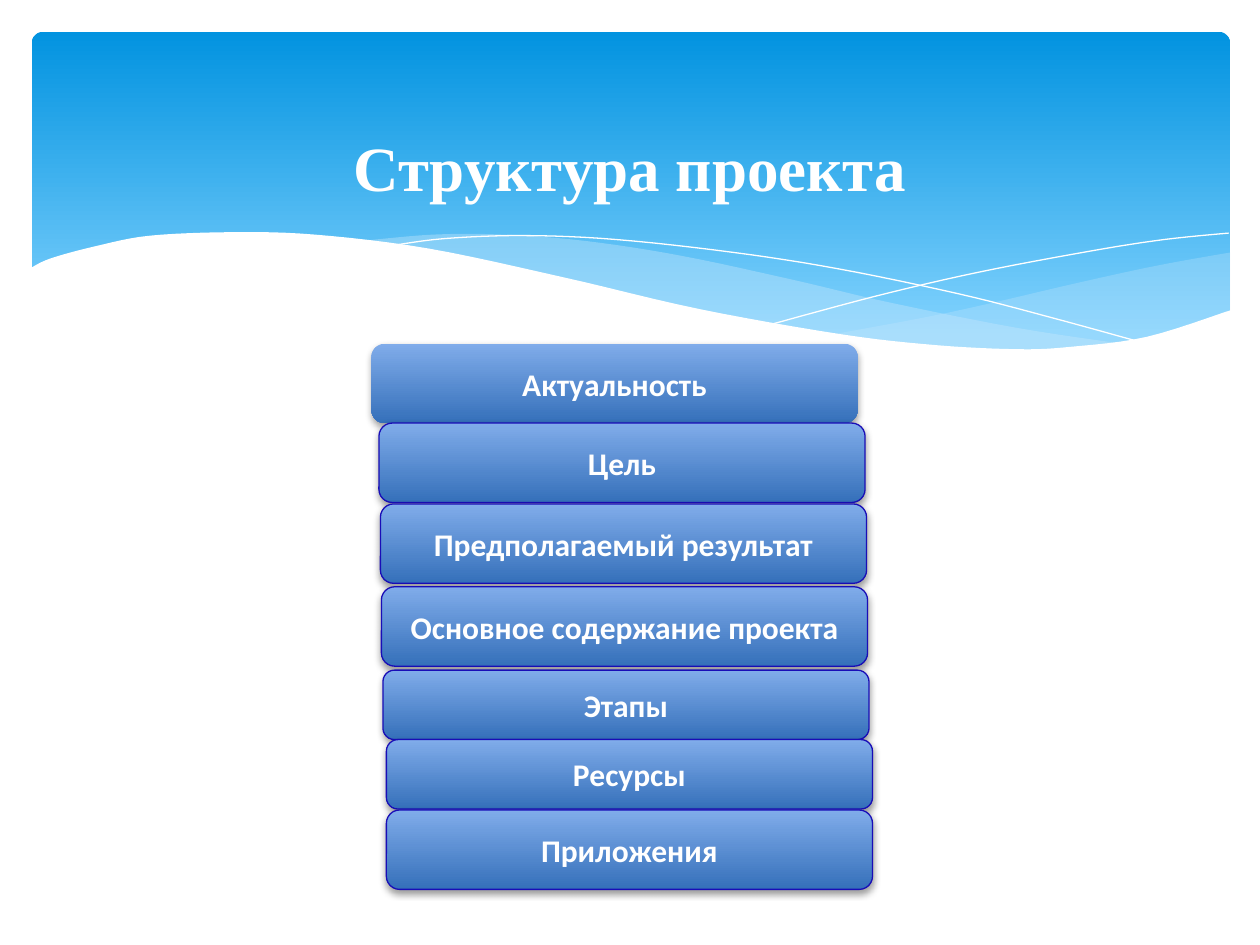
from lxml.etree import SubElement
from pptx import Presentation
from pptx.dml.color import RGBColor
from pptx.enum.shapes import MSO_SHAPE
from pptx.enum.text import MSO_ANCHOR, PP_ALIGN
from pptx.oxml.ns import qn
from pptx.util import Cm, Pt

BACK_WAVE = [
    [(24.16, 4.45), (22.76, 4.7), (21.23, 5.03), (18.49, 5.66), (16.15, 6.1)],
    [(16.15, 6.1), (17.63, 6.27), (18.9, 6.4), (20.04, 6.43), (21.06, 6.38),
     (22.35, 6.2), (23.11, 6.02), (24.16, 5.64)],
]
FRONT_WAVE = [
    [(22.05, 6.3), (19.86, 5.97), (17.3, 5.46), (15.34, 5), (13.11, 4.52),
     (11.18, 4.22), (9.5, 4.09), (8.1, 4.09), (6.63, 4.22)],
    [(6.63, 4.22), (8.05, 4.42), (9.63, 4.72), (11.84, 5.26), (14.63, 5.84),
     (17.02, 6.22), (19, 6.4), (20.4, 6.43), (22.05, 6.3)],
]
FALLING_LINE = [
    [(7.21, 4.32), (8.33, 4.17), (9.93, 4.11), (11.79, 4.19), (14.15, 4.45),
     (16.26, 4.78), (18.67, 5.28), (20.47, 5.74), (22.4, 6.27)],
]
RISING_LINE = [
    [(14.94, 5.89), (17.02, 5.33), (19.08, 4.85), (21.36, 4.42),
     (22.83, 4.19), (24.13, 4.06)],
]
WHITE_WAVE = [
    [(24.18, 5.61), (22.48, 6.15), (20.96, 6.35), (19.91, 6.4), (18.26, 6.32),
     (16.33, 6.1), (13.46, 5.59), (10.72, 4.95), (8, 4.37), (5.72, 4.09),
     (4.06, 4.04), (2.39, 4.11), (1.3, 4.32), (0.38, 4.57), (-0.05, 4.78)],
    [(-0.05, 7.72), (24.18, 7.72)],
]
SECTIONS = [
    ("Актуальность", 0, 0, 1.6, None),
    ("Цель", 0.15, 1.6, 1.6, "190DB7"),
    ("Предполагаемый результат", 0.18, 3.23, 1.6, "190DB7"),
    ("Основное содержание проекта", 0.2, 4.9, 1.6, "190DB7"),
    ("Этапы", 0.23, 6.58, 1.4, "190DB7"),
    ("Ресурсы", 0.3, 7.98, 1.4, "190DB7"),
    ("Приложения", 0.3, 9.4, 1.6, "190DB7"),
]


def color(value):
    return RGBColor.from_string(value)


def write(frame, text, size, font, ink="FFFFFF", bold=True, align=PP_ALIGN.CENTER):
    para = frame.paragraphs[0]
    para.alignment = align
    span = para.add_run()
    span.text = text
    span.font.size = Pt(size)
    span.font.name = font
    span.font.bold = bold
    span.font.color.rgb = color(ink)


def paint(shape, fill=None, alpha=None, line=None, width=0.75):
    shape.shadow.inherit = False
    if fill:
        shape.fill.solid()
        shape.fill.fore_color.rgb = color(fill)
    else:
        shape.fill.background()
    if alpha:
        tint = shape.element.spPr.find(".//" + qn("a:srgbClr"))
        SubElement(tint, qn("a:alpha"), val=str(alpha * 1000))
    if line:
        shape.line.color.rgb = color(line)
        shape.line.width = Pt(width)
    else:
        shape.line.fill.background()


def shade(shape, top, bottom, end=1):
    shape.fill.gradient()
    shape.fill.gradient_angle = 270
    for stop, value, position in zip(shape.fill.gradient_stops, (top, bottom), (0, end)):
        stop.color.rgb = color(value)
        stop.position = position


def cast_shadow(shape):
    effects = shape.element.spPr.find(qn("a:effectLst"))
    shadow = SubElement(effects, qn("a:outerShdw"), blurRad=str(Pt(4)),
                        dist=str(Pt(2)), dir="5400000", rotWithShape="0")
    tint = SubElement(shadow, qn("a:srgbClr"), val="000000")
    SubElement(tint, qn("a:alpha"), val="38000")


def smooth(knots, steps=6):
    if len(knots) < 3:
        return knots
    padded = [knots[0], *knots, knots[-1]]
    points = [knots[0]]
    for a, b, c, d in zip(padded, padded[1:], padded[2:], padded[3:]):
        for step in range(1, steps + 1):
            t = step / steps
            points.append(tuple(
                b[i] + (c[i] - a[i]) * t / 2
                + (2 * a[i] - 5 * b[i] + 4 * c[i] - d[i]) * t ** 2 / 2
                + (3 * b[i] - a[i] - 3 * c[i] + d[i]) * t ** 3 / 2
                for i in (0, 1)))
    return points


def add_curve(page, left, top, edges, closed=True, **look):
    points = [(Cm(left + x), Cm(top + y)) for edge in edges for x, y in smooth(edge)]
    builder = page.shapes.build_freeform(*points[0], scale=1)
    builder.add_line_segments(points[1:], close=closed)
    paint(builder.convert_to_shape(), **look)


def add_banner(page, left, top, width, height):
    banner = page.shapes.add_shape(MSO_SHAPE.ROUNDED_RECTANGLE,
                                   Cm(left), Cm(top), Cm(width), Cm(height))
    banner.adjustments[0] = 0.034
    paint(banner)
    shade(banner, "0293E0", "83D3FE", end=0.9)
    add_curve(page, left, top, BACK_WAVE, fill="C6E7FC", alpha=29)
    add_curve(page, left, top, FRONT_WAVE, fill="C6E7FC", alpha=40)
    for edges in (FALLING_LINE, RISING_LINE):
        add_curve(page, left, top, edges, closed=False, line="FFFFFF", width=0)
    add_curve(page, left, top, WHITE_WAVE, fill="FFFFFF")


def add_sections(page, left, top, width):
    for label, shift, drop, height, line in SECTIONS:
        box = page.shapes.add_shape(MSO_SHAPE.ROUNDED_RECTANGLE, Cm(left + shift),
                                    Cm(top + drop), Cm(width), Cm(height))
        paint(box, line=line)
        shade(box, "80ACEA", "3570BA")
        cast_shadow(box)
        box.text_frame.word_wrap = False
        box.text_frame.vertical_anchor = MSO_ANCHOR.MIDDLE
        write(box.text_frame, label, 18, "Calibri")


def add_title(page, left, top, width, height):
    title = page.shapes.title
    title.left, title.top = Cm(left), Cm(top)
    title.width, title.height = Cm(width), Cm(height)
    frame = title.text_frame
    frame.margin_left = frame.margin_right = frame.margin_top = 0
    frame.margin_bottom = Cm(0.1)
    frame.word_wrap = True
    frame.vertical_anchor = MSO_ANCHOR.BOTTOM
    write(frame, "Структура проекта", 36, "Times New Roman")
    title.element.getparent().append(title.element)


def main():
    deck = Presentation()
    deck.slide_width, deck.slide_height = Cm(25.4), Cm(19.05)
    page = deck.slides.add_slide(deck.slide_layouts[5])
    add_banner(page, 0.64, 0.64, 24.16, 6.86)
    add_sections(page, 7.49, 6.93, 9.8)
    add_title(page, 6.3, 0.53, 12.8, 3.68)
    deck.save("out.pptx")


if __name__ == "__main__":
    main()
